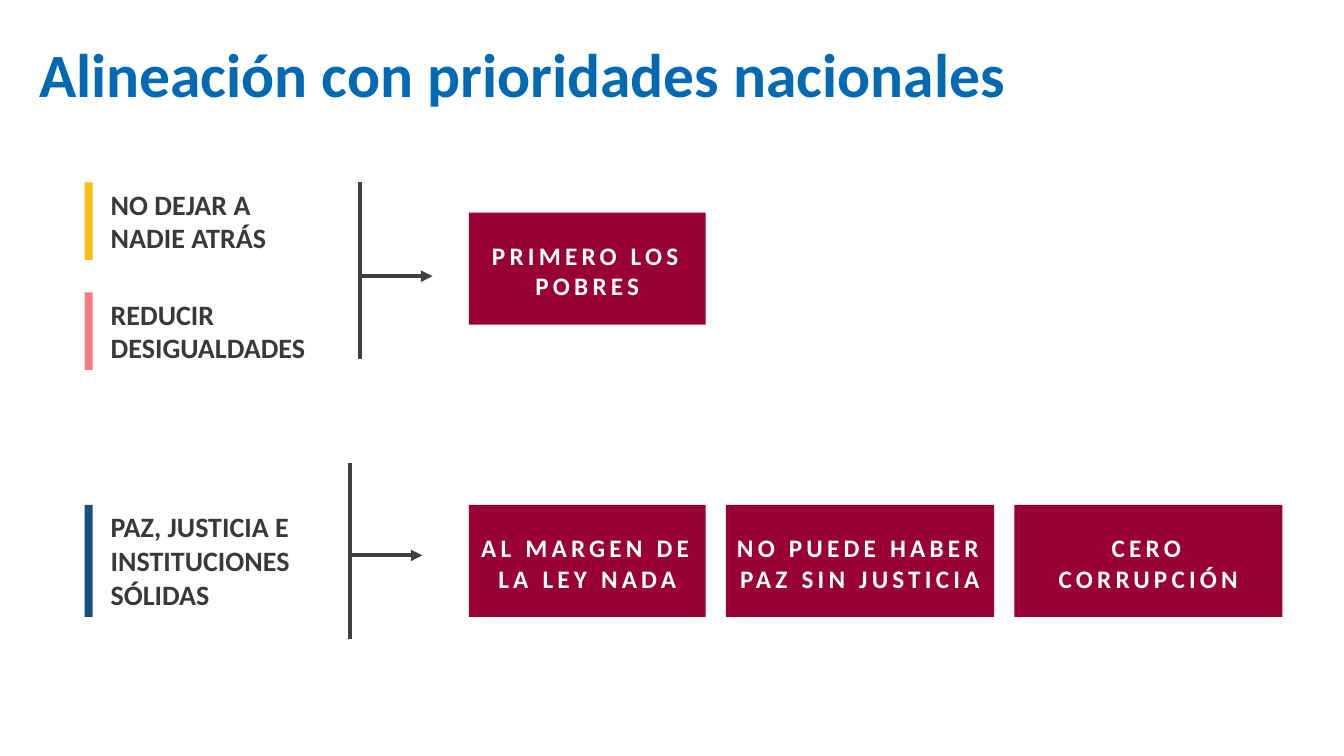
from lxml.etree import SubElement
from pptx import Presentation
from pptx.dml.color import RGBColor
from pptx.enum.shapes import MSO_CONNECTOR, MSO_SHAPE
from pptx.enum.text import MSO_ANCHOR, PP_ALIGN
from pptx.oxml.ns import qn
from pptx.util import Pt

BLUE = RGBColor(0x03, 0x69, 0xB2)
MAROON = RGBColor(0x99, 0x00, 0x33)
WHITE = RGBColor(0xFF, 0xFF, 0xFF)
TEXT_GREY = RGBColor(0x3B, 0x38, 0x38)
LINE_GREY = RGBColor(0x40, 0x40, 0x40)
YELLOW = RGBColor(0xF9, 0xBD, 0x16)
PINK = RGBColor(0xF2, 0x7A, 0x80)
NAVY = RGBColor(0x17, 0x50, 0x7B)

TITLE = "Alineación con prioridades nacionales"
GROUPS = [
    {
        "goals": [
            ("NO DEJAR A NADIE ATRÁS", YELLOW, 181, 77, 224),
            ("REDUCIR DESIGUALDADES", PINK, 290, 77, 214),
        ],
        "bracket": (357, 181, 274),
        "cards_top": 211,
        "cards": [("PRIMERO LOS POBRES", 235)],
    },
    {
        "goals": [("PAZ, JUSTICIA E INSTITUCIONES SÓLIDAS", NAVY, 501, 111, 214)],
        "bracket": (347, 459, 551),
        "cards_top": 501,
        "cards": [
            ("AL MARGEN DE LA LEY NADA", 235),
            ("NO PUEDE HABER PAZ SIN JUSTICIA", 266),
            ("CERO CORRUPCIÓN", 266),
        ],
    },
]

BAR_LEFT, BAR_WIDTH, LABEL_LEFT = 84, 8, 100
BRACKET_HEIGHT, ARROW_LENGTH = 175, 72
CARD_LEFT, CARD_HEIGHT, CARD_GAP = 465, 111, 20


def px(length):
    return length * 9144


def write(shape, text, size, color, align=PP_ALIGN.LEFT, anchor=MSO_ANCHOR.TOP,
          line_spacing=1.0, letter_spacing=0):
    frame = shape.text_frame
    frame.word_wrap = True
    frame.vertical_anchor = anchor
    paragraph = frame.paragraphs[0]
    paragraph.alignment = align
    paragraph.line_spacing = line_spacing
    run = paragraph.add_run()
    run.text = text
    run.font.name = "Calibri"
    run.font.size = Pt(size)
    run.font.bold = True
    run.font.color.rgb = color
    if letter_spacing:
        run._r.get_or_add_rPr().set("spc", str(letter_spacing * 100))


def add_text(slide, box, text, **text_format):
    shape = slide.shapes.add_textbox(*map(px, box))
    write(shape, text, **text_format)


def add_block(slide, box, color):
    shape = slide.shapes.add_shape(MSO_SHAPE.RECTANGLE, *map(px, box))
    shape.shadow.inherit = False
    shape.fill.solid()
    shape.fill.fore_color.rgb = color
    shape.line.fill.background()
    return shape


def add_line(slide, ends, arrow=False):
    connector = slide.shapes.add_connector(MSO_CONNECTOR.STRAIGHT, *map(px, ends))
    connector.line.color.rgb = LINE_GREY
    connector.line.width = Pt(2.75)
    if arrow:
        SubElement(connector.line._get_or_add_ln(), qn("a:tailEnd"), type="triangle")
    SubElement(connector._element.spPr, qn("a:effectLst"))


def add_group(slide, group):
    for text, color, top, height, width in group["goals"]:
        add_block(slide, (BAR_LEFT, top, BAR_WIDTH, height), color)
        add_text(slide, (LABEL_LEFT, top, width, height), text, size=20, color=TEXT_GREY)

    left, top, arrow_y = group["bracket"]
    add_line(slide, (left, top, left, top + BRACKET_HEIGHT))
    add_line(slide, (left, arrow_y, left + ARROW_LENGTH, arrow_y), arrow=True)

    card_left = CARD_LEFT
    for text, width in group["cards"]:
        card = add_block(slide, (card_left, group["cards_top"], width, CARD_HEIGHT), MAROON)
        card.text_frame.margin_top = px(9)
        write(card, text, size=18, color=WHITE, align=PP_ALIGN.CENTER,
              anchor=MSO_ANCHOR.MIDDLE, letter_spacing=3)
        card_left += width + CARD_GAP


def main():
    presentation = Presentation()
    presentation.slide_width = px(1333)
    presentation.slide_height = px(750)
    slide = presentation.slides.add_slide(presentation.slide_layouts[6])
    add_text(slide, (29, 39, 1204, 103), TITLE, size=44, color=BLUE, line_spacing=0.9)
    for group in GROUPS:
        add_group(slide, group)
    presentation.save("out.pptx")


if __name__ == "__main__":
    main()
